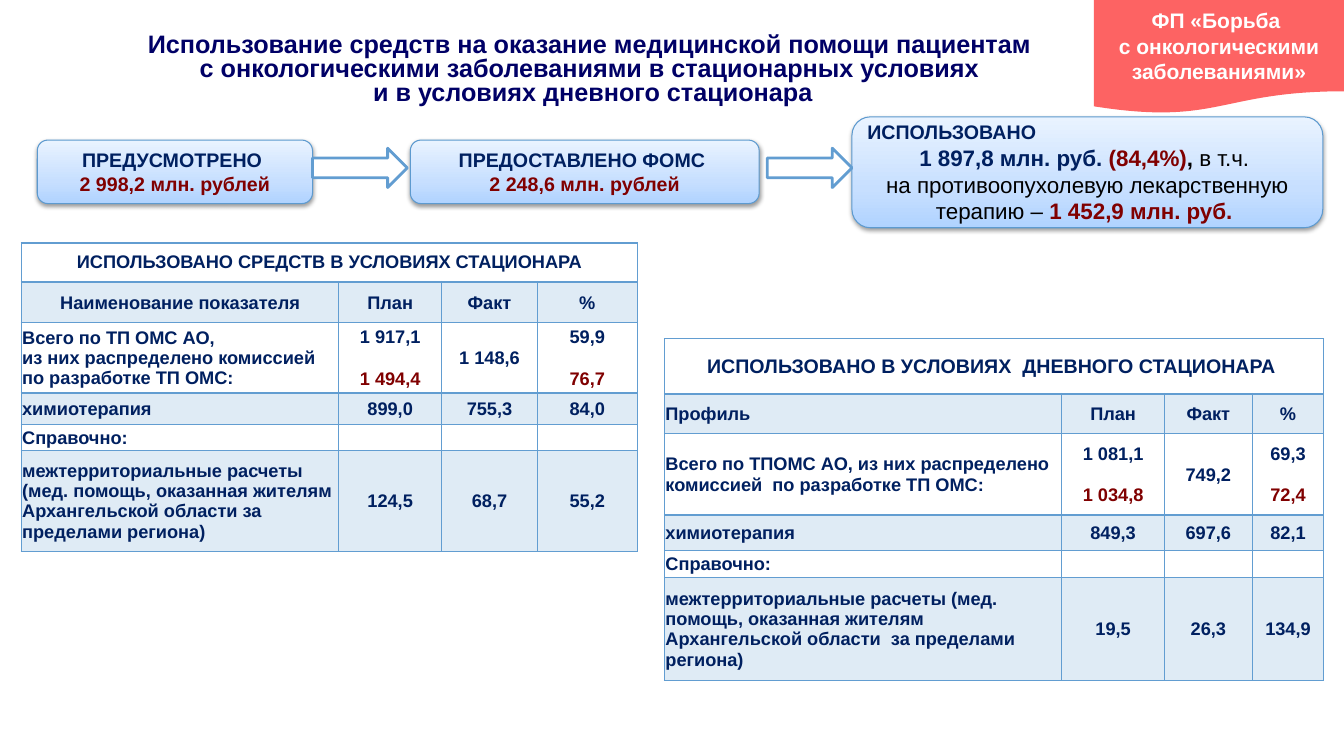
"""Build the slide on spending for oncology care in inpatient and day-hospital settings."""
from copy import deepcopy
from dataclasses import dataclass
from typing import Optional

from lxml.etree import SubElement
from pptx import Presentation
from pptx.dml.color import RGBColor
from pptx.enum.shapes import MSO_SHAPE
from pptx.enum.text import MSO_ANCHOR, PP_ALIGN
from pptx.oxml.ns import qn
from pptx.util import Inches, Pt


@dataclass(frozen=True)
class Theme:
    """Colours, type sizes and line widths."""
    font: str = "Arial"
    navy: str = "002060"
    title_blue: str = "000066"
    maroon: str = "800000"
    black: str = "000000"
    white: str = "FFFFFF"
    coral: str = "FD6363"
    box_line: str = "5D9ACF"
    accent: str = "629DD1"
    gradient: tuple = ((0, "B0D3FF"), (0.35, "C7DFFF"), (1, "E9F3FF"))
    title: float = 18
    amount: float = 16
    banner: float = 15
    box: float = 14
    cell: float = 13


T = Theme()


@dataclass(frozen=True)
class Run:
    """Text in one format."""
    text: str
    size: float = T.box
    color: str = T.navy
    bold: bool = True


@dataclass(frozen=True)
class Para:
    """Paragraph made of runs."""
    runs: tuple[Run, ...]
    align: PP_ALIGN = PP_ALIGN.CENTER
    spacing: Optional[float] = None
    before: float = 0


@dataclass(frozen=True)
class Box:
    """Position and size in inches."""
    left: float
    top: float
    width: float
    height: float

    def emu(self) -> tuple:
        """Return the four lengths for a shape call."""
        return tuple(Inches(v) for v in (self.left, self.top, self.width, self.height))


@dataclass(frozen=True)
class Stage:
    """Rounded box of the funding flow."""
    box: Box
    paras: tuple[Para, ...]


@dataclass(frozen=True)
class Report:
    """Table of planned and actual spending."""
    box: Box
    title: Run
    head_align: PP_ALIGN
    cols: tuple[float, ...]
    heights: tuple[float, ...]
    rows: tuple[tuple[str, ...], ...]


def amount_stage(box: Box, name: str, amount: str) -> Stage:
    """Return a stage with a name over an amount."""
    return Stage(box, (Para((Run(name),)), Para((Run(amount, color=T.maroon),))))


STAGES = (
    amount_stage(Box(0.37, 1.39, 2.73, 0.63), "ПРЕДУСМОТРЕНО ", "2 998,2 млн. рублей"),
    amount_stage(Box(4.07, 1.39, 3.46, 0.63), "ПРЕДОСТАВЛЕНО ФОМС ", "2 248,6 млн. рублей"),
    Stage(Box(8.45, 1.16, 4.67, 1.1), (
        Para((Run("ИСПОЛЬЗОВАНО"),), PP_ALIGN.LEFT),
        Para((
            Run("1 897,8 млн. руб. ", T.amount),
            Run("(84,4%)", T.amount, T.maroon),
            Run(", ", T.amount, T.black),
            Run("в т.ч. \nна противоопухолевую лекарственную терапию – ", T.amount, T.black, False),
            Run("1 452,9 млн. руб. ", T.amount, T.maroon),
        )),
    )),
)
ARROWS = (Box(3.1, 1.47, 0.94, 0.39), Box(7.61, 1.47, 0.84, 0.39))
TITLE = ("Использование средств на оказание медицинской помощи пациентам \n"
         "с онкологическими заболеваниями в стационарных условиях \n"
         "и в условиях дневного стационара")
REPORTS = (
    Report(
        Box(0.21, 2.41, 6.12, 3.07),
        Run("ИСПОЛЬЗОВАНО СРЕДСТВ В УСЛОВИЯХ СТАЦИОНАРА", T.cell),
        PP_ALIGN.CENTER, (3.15, 1.02, 0.95, 0.99), (0.39, 0.4, 0.7, 0.31, 0.26, 1),
        (("Наименование показателя", "План", "Факт", "%"),
         ("Всего по ТП ОМС АО, \nиз них распределено комиссией по разработке ТП ОМС:",
          "1 917,1|1 494,4", "1 148,6", "59,9|76,7"),
         ("химиотерапия", "899,0", "755,3", "84,0"),
         ("Справочно:", "", "", ""),
         ("межтерриториальные расчеты (мед. помощь, оказанная жителям Архангельской области "
          "за пределами региона)", "124,5", "68,7", "55,2"))),
    Report(
        Box(6.59, 3.36, 6.54, 3.39),
        Run("ИСПОЛЬЗОВАНО В УСЛОВИЯХ  ДНЕВНОГО СТАЦИОНАРА ", T.box),
        PP_ALIGN.LEFT, (3.94, 1.02, 0.87, 0.71), (0.55, 0.39, 0.81, 0.35, 0.27, 1.02),
        (("Профиль", "План", "Факт", "%"),
         ("Всего по ТПОМС АО, из них распределено комиссией  по разработке ТП ОМС:",
          "1 081,1|1 034,8", "749,2", "69,3|72,4"),
         ("химиотерапия", "849,3", "697,6", "82,1"),
         ("Справочно:", "", "", ""),
         ("межтерриториальные расчеты (мед. помощь, оказанная жителям Архангельской области  "
          "за пределами региона)", "19,5", "26,3", "134,9"))),
)


def write(tf, paras: tuple[Para, ...]) -> None:
    """Fill a text frame with formatted paragraphs."""
    tf.word_wrap = True
    for i, para in enumerate(paras):
        p = tf.add_paragraph() if i else tf.paragraphs[0]
        p.alignment = para.align
        if para.spacing:
            p.line_spacing = para.spacing
        if para.before:
            p.space_before = Pt(para.before)
        for run in para.runs:
            for n, line in enumerate(run.text.split("\n")):
                if n:
                    p.add_line_break()
                    p._p[-1].append(deepcopy(r.font._element))
                r = p.add_run()
                r.text = line
                r.font.name, r.font.size, r.font.bold = T.font, Pt(run.size), run.bold
                r.font.color.rgb = RGBColor.from_string(run.color)


def add_solid(s, kind: MSO_SHAPE, box: Box, color: str, line: Optional[str] = None):
    """Add a preset shape with a plain fill and an optional 2 pt line."""
    sp = s.shapes.add_shape(kind, *box.emu())
    sp.shadow.inherit = False
    sp.fill.solid()
    sp.fill.fore_color.rgb = RGBColor.from_string(color)
    if line:
        sp.line.color.rgb = RGBColor.from_string(line)
        sp.line.width = Pt(2)
    else:
        sp.line.fill.background()
    return sp


def add_stage(s, stage: Stage) -> None:
    """Add a gradient box with a soft shadow."""
    sp = add_solid(s, MSO_SHAPE.FLOWCHART_ALTERNATE_PROCESS, stage.box, T.white, T.box_line)
    sp.line.width = Pt(0.75)
    sp.fill.gradient()
    sp.fill.gradient_angle = 90
    stops = next(sp._element.iter(qn("a:gsLst")))
    stops.append(deepcopy(stops[0]))
    for stop, (position, color) in zip(sp.fill.gradient_stops, T.gradient):
        stop.position, stop.color.rgb = position, RGBColor.from_string(color)
    effects = next(sp._element.iter(qn("a:effectLst")))
    shadow = SubElement(effects, qn("a:outerShdw"), blurRad=str(Pt(3.1)), dist=str(Pt(1.6)),
                        dir="5400000", rotWithShape="0")
    color = SubElement(shadow, qn("a:srgbClr"), val=T.black)
    SubElement(color, qn("a:alpha"), val="38000")
    write(sp.text_frame, stage.paras)


def style_cell(cell, row: int) -> None:
    """Set the borders, fill, margins and anchor of a cell."""
    tc_pr = cell._tc.get_or_add_tcPr()
    for side in "LRTB":
        thick = (row, side) in ((0, "B"), (1, "T"))
        ln = SubElement(tc_pr, qn(f"a:ln{side}"), w=str(Pt(2 if thick else 1)))
        SubElement(SubElement(ln, qn("a:solidFill")), qn("a:srgbClr"), val=T.accent)
    if row % 2:
        cell.fill.solid()
        cell.fill.fore_color.rgb = RGBColor.from_string(T.accent)
        SubElement(tc_pr.find(qn("a:solidFill"))[0], qn("a:alpha"), val="20000")
    else:
        cell.fill.background()
    cell.vertical_anchor = MSO_ANCHOR.MIDDLE
    margins = (0.01, 0.01, 0.01, 0) if row else (0.13, 0.05, 0.13, 0.05)
    cell.margin_left, cell.margin_top, cell.margin_right, cell.margin_bottom = map(Inches, margins)


def add_report(s, report: Report) -> None:
    """Add a table with a merged title row."""
    tbl = s.shapes.add_table(len(report.heights), len(report.cols), *report.box.emu()).table
    tbl.first_row = tbl.horz_banding = False
    for col, width in zip(tbl.columns, report.cols):
        col.width = Inches(width)
    for i, height in enumerate(report.heights):
        tbl.rows[i].height = Inches(height)
        for j in range(len(report.cols)):
            style_cell(tbl.cell(i, j), i)
    tbl.cell(0, 0).merge(tbl.cell(0, len(report.cols) - 1))
    write(tbl.cell(0, 0).text_frame, (Para((report.title,)),))
    for i, row in enumerate(report.rows, 1):
        for j, text in enumerate(row):
            tf = tbl.cell(i, j).text_frame
            if not text:
                SubElement(tf.paragraphs[0]._p, qn("a:endParaRPr"), sz=str(int(T.cell * 100)))
                continue
            align = PP_ALIGN.CENTER if j else report.head_align if i == 1 else PP_ALIGN.LEFT
            write(tf, tuple(
                Para((Run(part, T.cell, T.maroon if n else T.navy),), align, before=15 * n)
                for n, part in enumerate(text.split("|"))))


def main() -> None:
    """Build and save the slide."""
    prs = Presentation()
    prs.slide_width, prs.slide_height = Inches(13.33), Inches(7.5)
    s = prs.slides.add_slide(prs.slide_layouts[6])
    for stage in STAGES:
        add_stage(s, stage)
    title = s.shapes.add_textbox(*Box(0.37, 0.29, 11.02, 0.78).emu())
    write(title.text_frame, (Para((Run(TITLE, T.title, T.title_blue),), spacing=0.8),))
    banner = add_solid(s, MSO_SHAPE.FLOWCHART_DOCUMENT, Box(10.85, 0, 2.48, 1.13), T.coral)
    write(banner.text_frame, (
        Para((Run("ФП «Борьба \nс онкологическими заболеваниями»", T.banner, T.white),)),))
    for box in ARROWS:
        add_solid(s, MSO_SHAPE.RIGHT_ARROW, box, T.white, T.accent)
    for report in REPORTS:
        add_report(s, report)
    prs.save("out.pptx")


if __name__ == "__main__":
    main()
